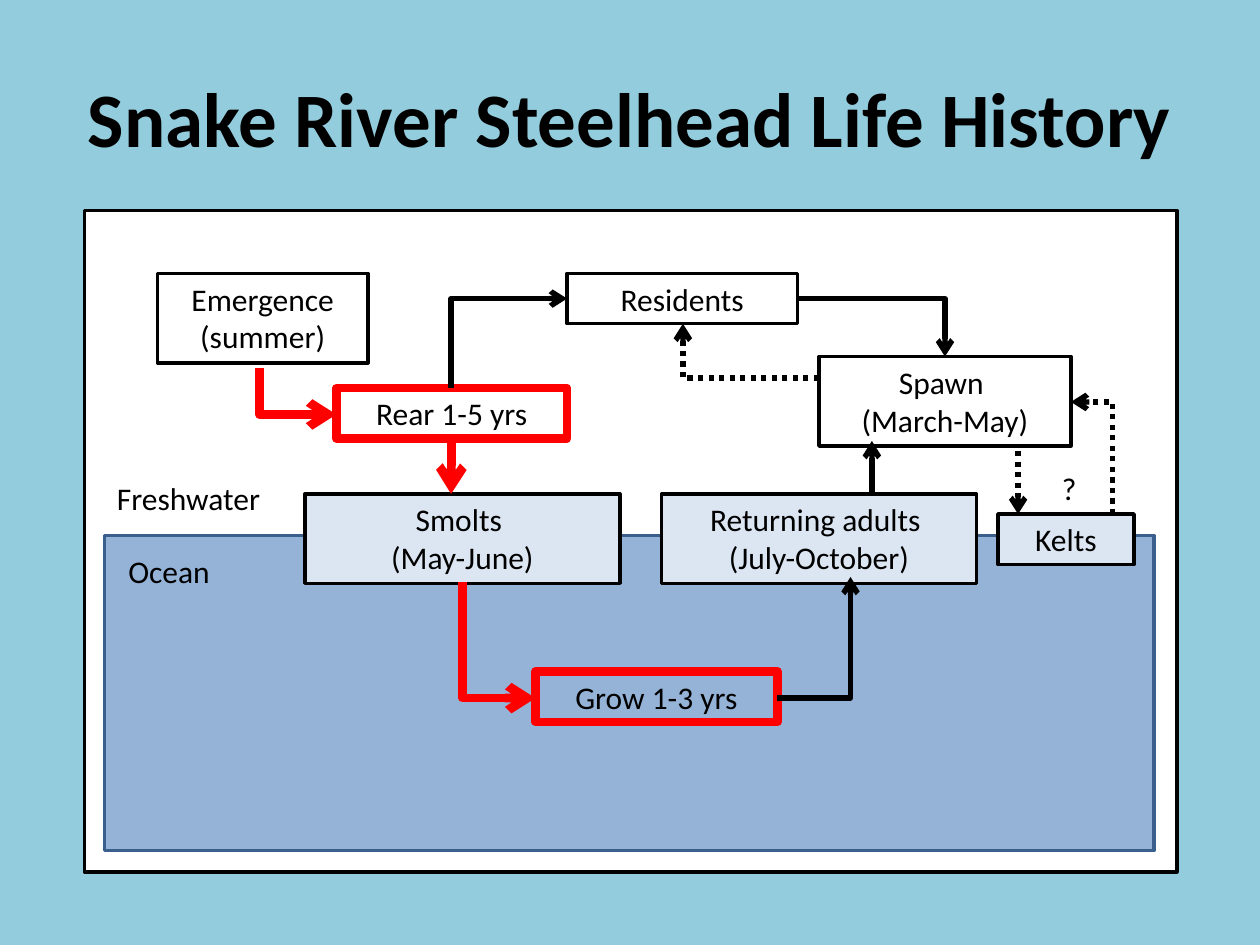
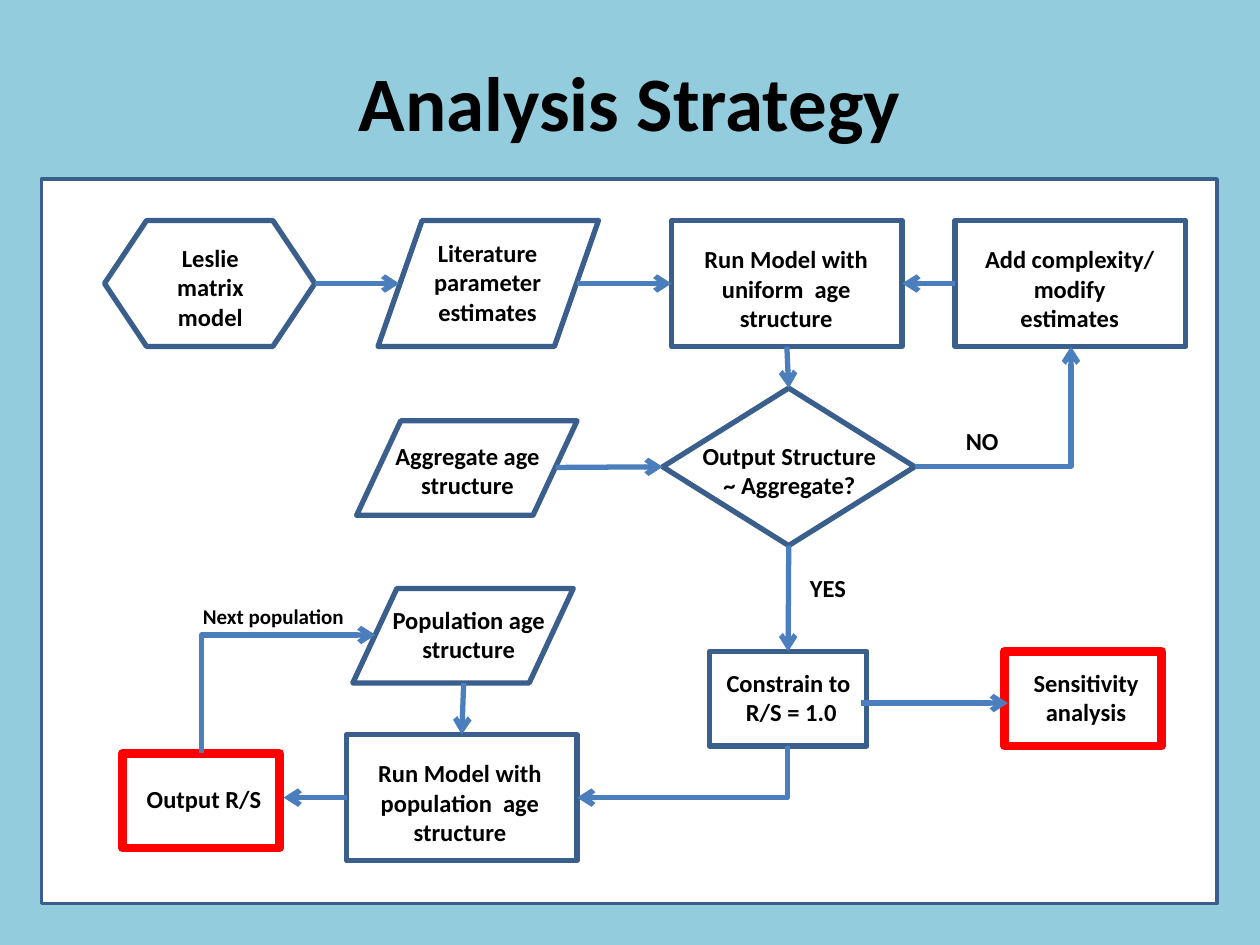
import pptx
import pptx.dml.color
import pptx.enum.dml
import pptx.enum.shapes
import pptx.enum.text
import pptx.oxml
import pptx.oxml.ns
import pptx.util
from pptx.util import Inches

SHAPES = pptx.enum.shapes.MSO_SHAPE
CONNECTORS = pptx.enum.shapes.MSO_CONNECTOR
ALIGN = pptx.enum.text.PP_ALIGN
ANCHOR = pptx.enum.text.MSO_ANCHOR
FONT = "Calibri"
BACKGROUND, WHITE, BLACK, RED = "93CDDD", "FFFFFF", "000000", "FF0000"
OCEAN, PALE, NAVY, BLUE = "95B3D7", "DCE6F2", "3A5F8C", "4B7EBC"
TOP, LEFT, BOTTOM, RIGHT = range(4)


def color(hex_code):
    return pptx.dml.color.RGBColor.from_string(hex_code)


def set_line(line, hex_code, width):
    line.color.rgb = color(hex_code)
    line.width = pptx.util.Pt(width)


def write(frame, lines, size, bold=False, align=ALIGN.CENTER, anchor=ANCHOR.TOP):
    """Fill a text frame with one paragraph per line."""
    frame.word_wrap = True
    frame.vertical_anchor = anchor
    for index, line in enumerate(lines):
        paragraph = frame.add_paragraph() if index else frame.paragraphs[0]
        paragraph.alignment = align
        run = paragraph.add_run()
        run.text = line
        run.font.name = FONT
        run.font.size = pptx.util.Pt(size)
        run.font.bold = bold
        run.font.color.rgb = color(BLACK)


def add_label(parent, box, lines, size, **style):
    label = parent.shapes.add_textbox(*map(Inches, box))
    write(label.text_frame, lines, size, **style)


def add_box(parent, box, line, width, fill=None, geometry=SHAPES.RECTANGLE, lines=()):
    shape = parent.shapes.add_shape(geometry, *map(Inches, box))
    shape.shadow.inherit = False
    if fill:
        shape.fill.solid()
        shape.fill.fore_color.rgb = color(fill)
    else:
        shape.fill.background()
    set_line(shape.line, line, width)
    if lines:
        write(shape.text_frame, lines, 18)
    return shape


def add_flow_step(slide, geometry, box, label_box, lines, line=NAVY, width=3):
    """Group an outlined flowchart shape with its label and return the shape."""
    group = slide.shapes.add_group_shape()
    shape = add_box(group, box, line, width, geometry=geometry)
    add_label(group, label_box, lines, 14, bold=True)
    return shape


def style_arrow(connector, hex_code, width, dotted):
    set_line(connector.line, hex_code, width)
    if dotted:
        connector.line.dash_style = pptx.enum.dml.MSO_LINE.ROUND_DOT
    line = connector.line._get_or_add_ln()
    tail = pptx.oxml.parse_xml(
        f'<a:tailEnd {pptx.oxml.ns.nsdecls("a")} type="arrow"/>')
    line.append(tail)
    effects = pptx.oxml.parse_xml(f'<a:effectLst {pptx.oxml.ns.nsdecls("a")}/>')
    line.addnext(effects)


def add_arrow(slide, start, end, hex_code, width, dotted=False,
              start_joint=None, end_joint=None):
    """Draw a straight arrow; a joint is a (shape, side) pair."""
    connector = slide.shapes.add_connector(
        CONNECTORS.STRAIGHT, *map(Inches, start + end))
    if start_joint:
        connector.begin_connect(*start_joint)
    if end_joint:
        connector.end_connect(*end_joint)
    style_arrow(connector, hex_code, width, dotted)


def add_elbow(slide, start, end, hex_code, width, dotted=False, vertical_first=False):
    """Draw an arrow with one right-angled turn."""
    if vertical_first:
        # The horizontal-first outline is laid out sideways, then turned by 90 degrees.
        middle_x, middle_y = (start[0] + end[0]) / 2, (start[1] + end[1]) / 2
        half_x, half_y = (end[0] - start[0]) / 2, (end[1] - start[1]) / 2
        start = (middle_x - half_y, middle_y + half_x)
        end = (middle_x + half_y, middle_y - half_x)
    connector = slide.shapes.add_connector(
        CONNECTORS.ELBOW, *map(Inches, start + end))
    properties = connector._element.spPr
    properties.find(pptx.oxml.ns.qn("a:prstGeom")).set("prst", "bentConnector2")
    if vertical_first:
        properties.find(pptx.oxml.ns.qn("a:xfrm")).set("rot", "5400000")
    style_arrow(connector, hex_code, width, dotted)


def add_slide(presentation, title, title_top, panel, panel_line):
    """Add a slide with the shared background, title and white panel."""
    slide = presentation.slides.add_slide(presentation.slide_layouts[6])
    slide.background.fill.solid()
    slide.background.fill.fore_color.rgb = color(BACKGROUND)
    add_box(slide, panel, panel_line, 2, WHITE)
    add_label(slide, (0.5, title_top, 9, 1.25), [title], 44, bold=True,
              anchor=ANCHOR.MIDDLE)
    return slide


def build_life_history(presentation):
    slide = add_slide(presentation, "Snake River Steelhead Life History", 0.3,
                      (0.67, 1.67, 8.67, 5.25), BLACK)
    add_box(slide, (0.83, 4.25, 8.33, 2.5), NAVY, 2, OCEAN)
    for box, text in [((0.83, 3.75, 1.5, 0.42), "Freshwater"),
                      ((0.92, 4.33, 1.42, 0.4), "Ocean"),
                      ((8.33, 3.67, 0.42, 0.4), "?")]:
        add_label(slide, box, [text], 18, align=ALIGN.LEFT)

    one_line, two_lines = 0.4, 0.71
    stages = [
        (1.25, 2.17, 1.67, None, ["Emergence", "(summer)"]),
        (4.5, 2.17, 1.83, None, ["Residents"]),
        (2.42, 3.92, 2.5, PALE, ["Smolts ", "(May-June)"]),
        (5.25, 3.92, 2.5, PALE, ["Returning adults ", "(July-October)"]),
        (6.5, 2.83, 2, None, ["Spawn ", "(March-May)"]),
        (7.92, 4.08, 1.08, PALE, ["Kelts"]),
    ]
    for left, top, width, fill, lines in stages:
        height = two_lines if len(lines) == 2 else one_line
        add_box(slide, (left, top, width, height), BLACK, 2, fill, lines=lines)
    rear = add_box(slide, (2.67, 3.08, 1.83, one_line), RED, 5, lines=["Rear 1-5 yrs"])
    add_box(slide, (4.25, 5.33, 1.92, one_line), RED, 5, lines=["Grow 1-3 yrs"])

    add_arrow(slide, (3.58, 3.48), (3.58, 3.92), RED, 5, start_joint=(rear, BOTTOM))
    add_arrow(slide, (6.92, 3.92), (6.92, 3.5), BLACK, 3)
    add_arrow(slide, (8.08, 3.58), (8.08, 4.08), BLACK, 3, dotted=True)
    for start, end in [((2.06, 2.92), (2.67, 3.29)), ((3.67, 4.62), (4.25, 5.54))]:
        add_elbow(slide, start, end, RED, 5, vertical_first=True)
    add_elbow(slide, (3.58, 3.08), (4.5, 2.37), BLACK, 3, vertical_first=True)
    add_elbow(slide, (6.17, 5.54), (6.75, 4.58), BLACK, 3)
    add_elbow(slide, (6.33, 2.37), (7.5, 2.83), BLACK, 3)
    add_elbow(slide, (6.5, 3), (5.42, 2.57), BLACK, 3, dotted=True)
    add_elbow(slide, (8.83, 4.08), (8.5, 3.19), BLACK, 3, dotted=True,
              vertical_first=True)


def build_analysis_strategy(presentation):
    slide = add_slide(presentation, "Analysis Strategy", 0.17,
                      (0.33, 1.42, 9.33, 5.75), NAVY)
    process, data = SHAPES.FLOWCHART_PROCESS, SHAPES.FLOWCHART_DATA
    leslie = add_flow_step(
        slide, SHAPES.FLOWCHART_PREPARATION, (0.83, 1.75, 1.67, 1),
        (1.17, 1.88, 1, 0.81), ["Leslie matrix model"])
    add_flow_step(slide, data, (3, 1.75, 1.75, 1), (3.16, 1.84, 1.42, 0.81),
                  ["Literature parameter estimates"])
    uniform = add_flow_step(
        slide, process, (5.33, 1.75, 1.83, 1), (5.45, 1.89, 1.58, 0.65),
        ["Run Model with uniform  age structure"])
    decision = add_flow_step(
        slide, SHAPES.FLOWCHART_DECISION, (5.26, 3.08, 2, 1.25),
        (5.39, 3.45, 1.75, 0.57), ["Output Structure", "~ Aggregate?"])
    add_flow_step(slide, data, (2.83, 3.34, 1.75, 0.75), (3, 3.45, 1.42, 0.57),
                  ["Aggregate age structure"])
    modify = add_flow_step(
        slide, process, (7.58, 1.75, 1.83, 1), (7.7, 1.89, 1.58, 0.81),
        ["Add complexity/ modify estimates"])
    add_flow_step(slide, data, (2.8, 4.67, 1.75, 0.75), (3.01, 4.75, 1.42, 0.57),
                  ["Population age structure"])
    population = add_flow_step(
        slide, process, (2.75, 5.83, 1.83, 1), (2.86, 5.97, 1.58, 0.81),
        ["Run Model with population  age structure"])
    constrain = add_flow_step(
        slide, process, (5.63, 5.17, 1.25, 0.75), (5.49, 5.25, 1.58, 0.57),
        ["Constrain to ", "R/S = 1.0"])
    add_flow_step(slide, process, (0.97, 5.98, 1.25, 0.75), (0.83, 6.17, 1.58, 0.34),
                  ["Output R/S"], RED, 5)
    add_flow_step(slide, process, (7.97, 5.17, 1.25, 0.75), (7.83, 5.25, 1.58, 0.57),
                  ["Sensitivity analysis"], RED, 5)

    arrows = [
        ((2.5, 2.25), (3.17, 2.25), (leslie, RIGHT), None),
        ((4.58, 2.25), (5.33, 2.25), None, (uniform, LEFT)),
        ((6.25, 2.75), (6.25, 3.08), (uniform, BOTTOM), (decision, TOP)),
        ((4.41, 3.71), (5.25, 3.71), None, (decision, LEFT)),
        ((7.58, 2.25), (7.17, 2.25), (modify, LEFT), (uniform, RIGHT)),
        ((6.26, 4.33), (6.25, 5.17), (decision, BOTTOM), (constrain, TOP)),
        ((6.83, 5.58), (8, 5.58), None, None),
        ((3.68, 5.42), (3.67, 5.83), None, (population, TOP)),
        ((2.75, 6.33), (2.25, 6.33), (population, LEFT), None),
    ]
    for start, end, start_joint, end_joint in arrows:
        add_arrow(slide, start, end, BLUE, 3,
                  start_joint=start_joint, end_joint=end_joint)
    add_elbow(slide, (7.26, 3.7), (8.5, 2.75), BLUE, 3)
    add_elbow(slide, (6.25, 5.92), (4.58, 6.33), BLUE, 3, vertical_first=True)
    add_elbow(slide, (1.6, 5.98), (2.98, 5.04), BLUE, 3, vertical_first=True)

    add_label(slide, (7.42, 3.33, 0.75, 0.34), ["NO"], 14, bold=True)
    add_label(slide, (6.33, 4.5, 0.75, 0.34), ["YES"], 14, bold=True, align=ALIGN.LEFT)
    add_label(slide, (1.42, 4.74, 1.5, 0.3), ["Next population"], 12, bold=True)


def main():
    presentation = pptx.Presentation()
    presentation.slide_width = Inches(10)
    presentation.slide_height = Inches(7.5)
    build_life_history(presentation)
    build_analysis_strategy(presentation)
    presentation.save("out.pptx")


if __name__ == "__main__":
    main()
